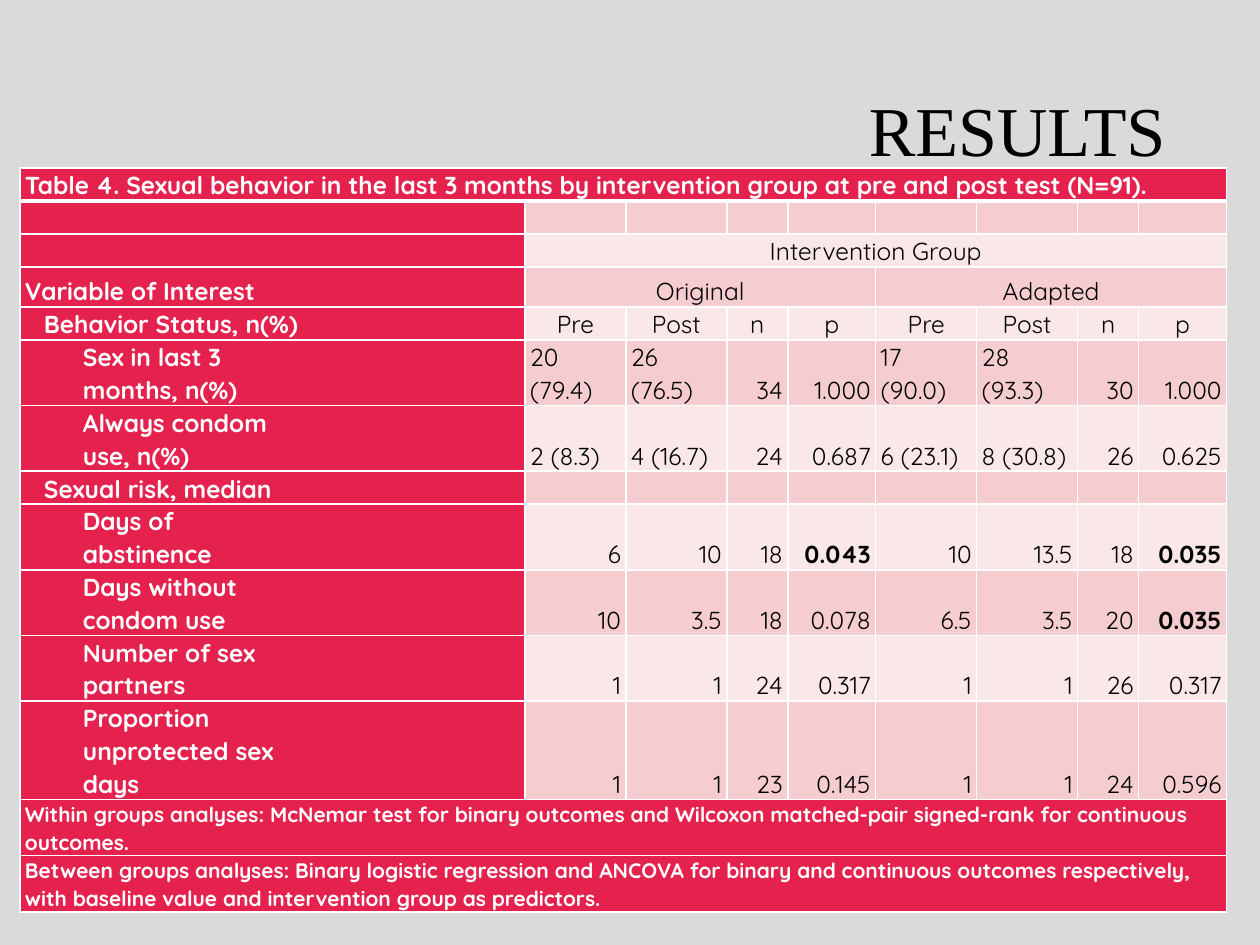
from lxml import etree
from pptx import Presentation
from pptx.dml.color import RGBColor
from pptx.enum.text import MSO_ANCHOR, PP_ALIGN
from pptx.oxml.ns import qn
from pptx.util import Pt

LEFT, MID, RIGHT = PP_ALIGN.LEFT, PP_ALIGN.CENTER, PP_ALIGN.RIGHT
BOTTOM, MIDDLE = MSO_ANCHOR.BOTTOM, MSO_ANCHOR.MIDDLE
PX = 914400 // 126
RED, PINK, PALE = "E5224E", "F5CDD0", "FAE8E9"
WHITE, BLACK = "FFFFFF", "000000"


def write(frame, text, size=14, color=BLACK, bold=False, align=LEFT,
          font="Quicksand", space=1.07, indent=0):
    """Fill a text frame, one paragraph for each line of text."""
    for i, line in enumerate(text.split("\n")):
        para = frame.add_paragraph() if i else frame.paragraphs[0]
        para.alignment = align
        para.line_spacing = space
        if indent:
            para._p.get_or_add_pPr().set("indent", str(indent * PX))
        if not line:
            para._p.get_or_add_endParaRPr().set("sz", str(size * 100))
            continue
        run = para.add_run()
        run.text = line
        run.font.size = Pt(size)
        run.font.name = font
        run.font.bold = bold
        run.font.color.rgb = RGBColor.from_string(color)


def style(cell, fill, base=1):
    """Set margins, white borders and fill; base is the lower border in points."""
    cell.margin_left = cell.margin_right = 5 * PX
    cell.margin_top = cell.margin_bottom = 0
    cell.vertical_anchor = BOTTOM
    props = cell._tc.get_or_add_tcPr()
    for side, width in (("L", 1), ("R", 1), ("T", 1), ("B", base)):
        line = etree.SubElement(props, qn("a:ln" + side), w=str(Pt(width)))
        solid = etree.SubElement(line, qn("a:solidFill"))
        etree.SubElement(solid, qn("a:srgbClr"), val=WHITE)
    cell.fill.solid()
    cell.fill.fore_color.rgb = RGBColor.from_string(fill)


prs = Presentation()
prs.slide_width, prs.slide_height = 1260 * PX, 945 * PX
slide = prs.slides.add_slide(prs.slide_layouts[5])
slide.background.fill.solid()
slide.background.fill.fore_color.rgb = RGBColor.from_string("DADADA")

title = slide.shapes.title
title.left, title.top, title.width, title.height = [
    n * PX for n in (300, 45, 878, 178)]
title.text_frame.vertical_anchor = MIDDLE
write(title.text_frame, "RESULTS", size=40, align=RIGHT,
      font="Times New Roman", space=0.9)

# Each row: height, indent of its label, label, values
rows = [
    (33, 0, "Table 4. Sexual behavior in the last 3 months by intervention "
            "group at pre and post test (N=91).", []),
    (33, 0, "", [""] * 8),
    (33, 0, "", ["Intervention Group"]),
    (40, 0, "Variable of Interest", ["Original", "Adapted"]),
    (33, 19, "Behavior Status, n(%)", ["Pre", "Post", "n", "p"] * 2),
    (65, 58, "Sex in last 3\nmonths, n(%)",
     ["20 (79.4)", "26 (76.5)", "34", "1.000",
      "17 (90.0)", "28 (93.3)", "30", "1.000"]),
    (65, 58, "Always condom\nuse, n(%)",
     ["2 (8.3)", "4 (16.7)", "24", "0.687",
      "6 (23.1)", "8 (30.8)", "26", "0.625"]),
    (33, 19, "Sexual risk, median", [""] * 8),
    (65, 58, "Days of\nabstinence",
     ["6", "10", "18", "0.043", "10", "13.5", "18", "0.035"]),
    (65, 58, "Days without\ncondom use",
     ["10", "3.5", "18", "0.078", "6.5", "3.5", "20", "0.035"]),
    (65, 58, "Number of sex\npartners",
     ["1", "1", "24", "0.317", "1", "1", "26", "0.317"]),
    (98, 58, "Proportion\nunprotected sex\ndays",
     ["1", "1", "23", "0.145", "1", "1", "24", "0.596"]),
    (56, 0, "Within groups analyses: McNemar test for binary outcomes and "
            "Wilcoxon matched-pair signed-rank for continuous outcomes.", []),
    (56, 0, "Between groups analyses: Binary logistic regression and ANCOVA "
            "for binary and continuous outcomes respectively, with baseline "
            "value and intervention group as predictors.", []),
]
cols = [505] + [101, 101, 61, 88] * 2
high = sum(row[0] for row in rows)
table = slide.shapes.add_table(len(rows), len(cols), 20 * PX, 168 * PX,
                               sum(cols) * PX, high * PX).table
table.first_row = table.horz_banding = False
for col, width in zip(table.columns, cols):
    col.width = width * PX

for r, (height, indent, label, values) in enumerate(rows):
    table.rows[r].height = height * PX
    for c in range(len(cols)):
        fill = RED if c == 0 or not values else PINK if r % 2 else PALE
        style(table.cell(r, c), fill, base=1 if r else 3)
    head = table.cell(r, 0)
    if not values:
        head.merge(table.cell(r, 8))
    write(head.text_frame, label, size=12 if r > 11 else 14, color=WHITE,
          bold=True, indent=indent)
    for i, value in enumerate(values):
        span = 8 // len(values)
        first = 1 + i * span
        cell = table.cell(r, first)
        if span > 1:
            cell.merge(table.cell(r, first + span - 1))
        align = MID if r < 5 else LEFT if "(" in value else RIGHT
        write(cell.text_frame, value, align=align,
              bold=value in ("0.043", "0.035"))

prs.save("out.pptx")
